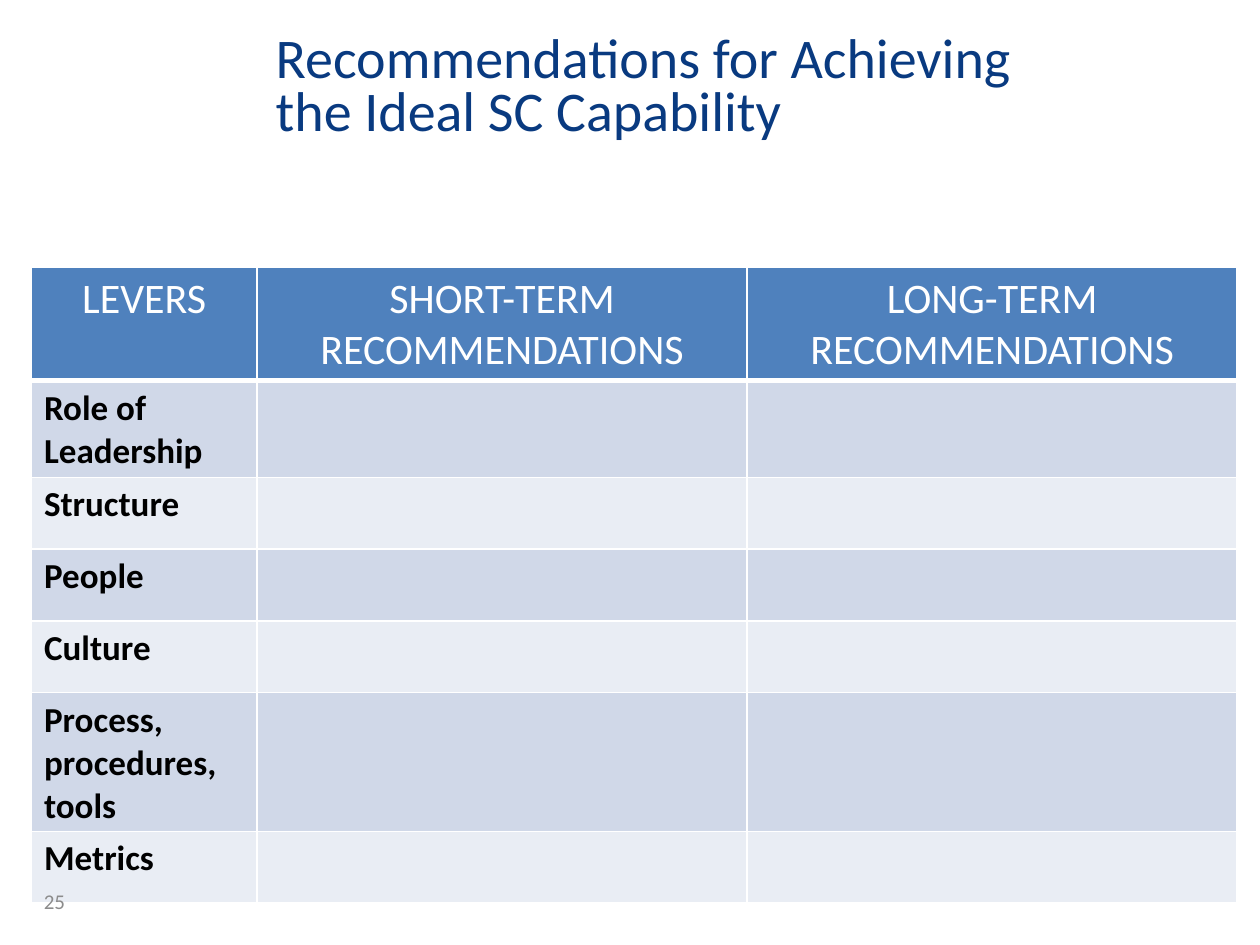
import pptx
import pptx.dml.color
import pptx.enum.text
import pptx.oxml
import pptx.oxml.ns
import pptx.util
from pptx.util import Inches

COLORS = {
    "title": "093A80",
    "header": "4F81BD",
    "band_dark": "D0D8E8",
    "band_light": "E9EDF4",
    "white": "FFFFFF",
    "black": "000000",
    "number": "8C8C8C",
}
HEADINGS = ["LEVERS", "SHORT-TERM RECOMMENDATIONS", "LONG-TERM RECOMMENDATIONS"]
LEVERS = ["Role of Leadership", "Structure", "People", "Culture",
          "Process, procedures, tools", "Metrics"]
COLUMN_WIDTHS = [1.79, 3.89, 3.89]
HEADER_HEIGHT, ROW_HEIGHT, TALL_ROW_HEIGHT = 0.85, 0.57, 1.02
ALIGN = pptx.enum.text.PP_ALIGN
ANCHOR = pptx.enum.text.MSO_ANCHOR


def rgb(name):
    return pptx.dml.color.RGBColor.from_string(COLORS[name])


class SlideBuilder:
    font = "Calibri"

    def __init__(self, prs):
        self.slide = prs.slides.add_slide(prs.slide_layouts[6])

    def run(self, p, text, size, color, bold=False):
        r = p.add_run()
        r.text = text
        r.font.name = self.font
        r.font.size = pptx.util.Pt(size)
        r.font.bold = bold
        r.font.color.rgb = rgb(color)

    def text(self, box, lines, size, color, anchor=ANCHOR.TOP, spacing=None):
        tf = self.slide.shapes.add_textbox(*map(Inches, box)).text_frame
        tf.word_wrap = True
        tf.vertical_anchor = anchor
        p = tf.paragraphs[0]
        p.line_spacing = spacing
        for i, line in enumerate(lines):
            if i:
                p.add_line_break()
            self.run(p, line, size, color)

    def borders(self, cell, bottom):
        tc_pr = cell._tc.get_or_add_tcPr()
        for side, width in (("L", 1), ("R", 1), ("T", 1), ("B", bottom)):
            tc_pr.append(pptx.oxml.parse_xml(
                f'<a:ln{side} {pptx.oxml.ns.nsdecls("a")} w="{pptx.util.Pt(width)}">'
                f'<a:solidFill><a:srgbClr val="{COLORS["white"]}"/></a:solidFill>'
                f'</a:ln{side}>'))

    def table(self, left, top, widths, heights, rows):
        table = self.slide.shapes.add_table(
            len(heights), len(widths), Inches(left), Inches(top),
            Inches(sum(widths)), Inches(sum(heights))).table
        table.first_row = table.horz_banding = False
        for column, width in zip(table.columns, widths):
            column.width = Inches(width)
        for i, (row, height) in enumerate(zip(table.rows, heights)):
            row.height = Inches(height)
            header = i == 0
            band = "band_dark" if i % 2 else "band_light"
            for cell, text in zip(row.cells, rows[i]):
                self.borders(cell, 3 if header else 1)
                cell.fill.solid()
                cell.fill.fore_color.rgb = rgb("header" if header else band)
                p = cell.text_frame.paragraphs[0]
                if header:
                    p.alignment = ALIGN.CENTER
                    self.run(p, text, 24, "white")
                elif text:
                    self.run(p, text, 20, "black", bold=True)


def main():
    prs = pptx.Presentation()
    prs.slide_width, prs.slide_height = Inches(10), Inches(7.5)
    s = SlideBuilder(prs)

    # Title
    s.text((2.09, 0.23, 8.16, 1.26),
           ["Recommendations for Achieving ", "the Ideal SC Capability"],
           32, "title", spacing=0.8)

    # Recommendations by lever, left open to be filled in
    heights = [HEADER_HEIGHT] + [
        TALL_ROW_HEIGHT if lever.startswith("Process") else ROW_HEIGHT
        for lever in LEVERS]
    s.table(0.25, 2.12, COLUMN_WIDTHS, heights,
            [HEADINGS] + [[lever, "", ""] for lever in LEVERS])

    # Slide number
    s.text((0.25, 6.95, 2.33, 0.4), ["25"], 12, "number", ANCHOR.MIDDLE)

    prs.save("out.pptx")


if __name__ == "__main__":
    main()
